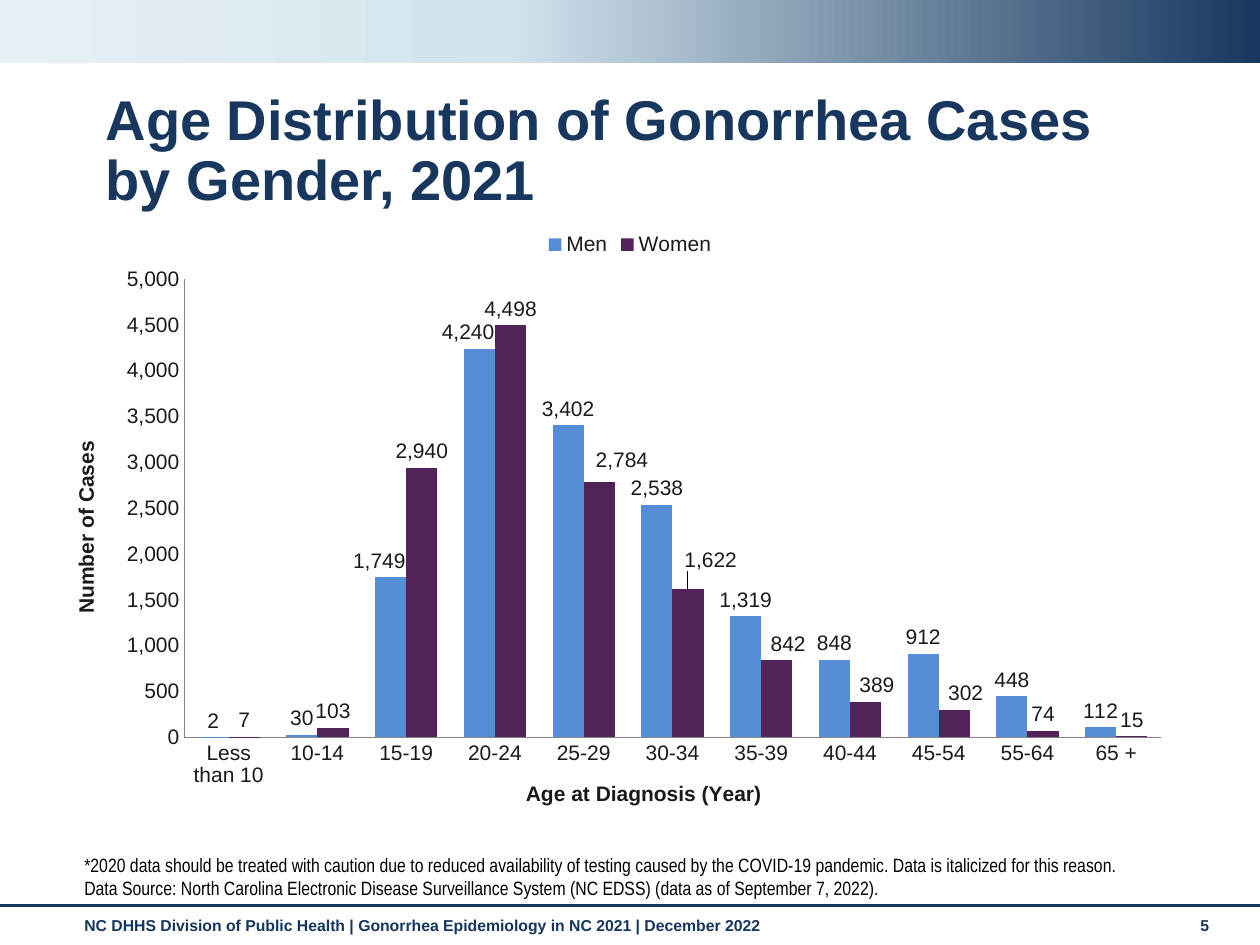
from copy import deepcopy

from lxml.etree import SubElement
from pptx import Presentation
from pptx.chart.data import CategoryChartData
from pptx.dml.color import RGBColor
from pptx.enum.chart import XL_CHART_TYPE as ChartType
from pptx.enum.chart import XL_LABEL_POSITION as LabelPosition
from pptx.enum.chart import XL_LEGEND_POSITION as LegendPosition
from pptx.enum.chart import XL_TICK_MARK as TickMark
from pptx.enum.shapes import MSO_CONNECTOR as Connector
from pptx.enum.shapes import MSO_SHAPE as Shape
from pptx.enum.text import MSO_ANCHOR as Anchor
from pptx.oxml import parse_xml
from pptx.oxml.ns import nsdecls, qn
from pptx.util import Cm, Pt

NAVY = RGBColor(0x17, 0x37, 0x5E)
FOOTER_NAVY = RGBColor(0x15, 0x36, 0x5E)
PALE_BLUE = RGBColor(0xD3, 0xE4, 0xED)
ICE = RGBColor(0xE9, 0xF1, 0xF6)
BLUE = RGBColor(0x55, 0x8E, 0xD5)
PURPLE = RGBColor(0x52, 0x23, 0x58)
INK = RGBColor(0x1A, 0x1A, 0x1A)
GRAY = RGBColor(0x86, 0x86, 0x86)
BLACK = RGBColor(0, 0, 0)

prs = Presentation()
prs.slide_width, prs.slide_height = Cm(25.4), Cm(19.05)
slide = prs.slides.add_slide(prs.slide_layouts[6])


def add_text(box, lines, size, color, bold=False, font="Arial", anchor=Anchor.TOP, spacing=None):
    frame = slide.shapes.add_textbox(*map(Cm, box)).text_frame
    frame.word_wrap = True
    frame.vertical_anchor = anchor
    frame.text = "\n".join(lines)
    for paragraph in frame.paragraphs:
        paragraph.font.name = font
        paragraph.font.size = Pt(size)
        paragraph.font.bold = bold
        paragraph.font.color.rgb = color
        paragraph.line_spacing = spacing


def manual_layout(x, y, width=None, height=None):
    layout = parse_xml(f"<c:layout {nsdecls('c')}><c:manualLayout/></c:layout>")
    values = {"x": x, "y": y}
    if width:
        values = {"layoutTarget": "inner", "xMode": "edge", "yMode": "edge",
                  **values, "w": width, "h": height}
    for tag, value in values.items():
        SubElement(layout[0], qn(f"c:{tag}")).set("val", str(value))
    return layout


banner = slide.shapes.add_shape(Shape.RECTANGLE, 0, 0, prs.slide_width, Cm(1.27))
banner.shadow.inherit = False
banner.line.fill.background()
banner.fill.gradient()
banner.fill.gradient_angle = 180
stop_list = banner.fill._fill._gradFill.gsLst
stop_list.append(deepcopy(stop_list[-1]))
for stop, position, color in zip(banner.fill.gradient_stops, (0, 0.6, 1), (NAVY, PALE_BLUE, ICE)):
    stop.position = position
    stop.color.rgb = color

footer_rule = slide.shapes.add_connector(
    Connector.STRAIGHT, 0, Cm(18.26), prs.slide_width, Cm(18.26))
footer_rule.line.color.rgb = NAVY
footer_rule.line.width = Pt(1.75)
SubElement(footer_rule._element.spPr, qn("a:effectLst"))

add_text((1.45, 18.34, 22.2, 0.74),
         ["NC DHHS Division of Public Health | Gonorrhea Epidemiology in NC 2021 | December 2022"],
         9, FOOTER_NAVY, bold=True)
add_text((23.95, 18.34, 1.12, 0.76), ["5"], 9, FOOTER_NAVY, bold=True)
add_text((1.88, 1.73, 21.79, 1.52), ["Age Distribution of Gonorrhea Cases by Gender, 2021"],
         32, NAVY, bold=True, spacing=0.9)

cases = CategoryChartData(number_format="#,##0")
cases.categories = ["Less than 10", "10-14", "15-19", "20-24", "25-29", "30-34",
                    "35-39", "40-44", "45-54", "55-64", "65 +"]
cases.add_series("Men", (2, 30, 1749, 4240, 3402, 2538, 1319, 848, 912, 448, 112))
cases.add_series("Women", (7, 103, 2940, 4498, 2784, 1622, 842, 389, 302, 74, 15))
chart = slide.shapes.add_chart(
    ChartType.COLUMN_CLUSTERED, Cm(1.27), Cm(4.42), Cm(22.86), Cm(11.94), cases).chart
chart.has_title = False
chart.font.name = "Arial"
chart.font.size = Pt(12)
chart.font.color.rgb = INK
chart.has_legend = True
chart.legend.position = LegendPosition.TOP
chart.legend.include_in_layout = False

plot_area = chart._chartSpace.chart.plotArea
for layout in plot_area.findall(qn("c:layout")):
    plot_area.remove(layout)
plot_area.insert(0, manual_layout(0.107, 0.101, 0.861, 0.774))

for axis, title in ((chart.category_axis, "Age at Diagnosis (Year)"),
                    (chart.value_axis, "Number of Cases")):
    axis.has_major_gridlines = False
    axis.major_tick_mark = axis.minor_tick_mark = TickMark.NONE
    axis.format.line.color.rgb = GRAY
    axis.format.line.width = Pt(0.75)
    axis.axis_title.text_frame.text = title
    title_font = axis.axis_title.text_frame.paragraphs[0].font
    title_font.name = "Arial"
    title_font.size = Pt(12)
    title_font.bold = True
    title_font.color.rgb = INK
chart.value_axis.minimum_scale = 0
chart.value_axis.maximum_scale = 5000
chart.value_axis.major_unit = 500
chart.value_axis.tick_labels.number_format = "#,##0"
chart.value_axis.tick_labels.number_format_is_linked = False

columns = chart.plots[0]
columns.gap_width = 85
columns.overlap = 0
columns.vary_by_categories = False
men_shifts = {2: (-0.01, 0), 3: (-0.01, 0)}
women_shifts = {4: (0.02, -0.01), 5: (0.02, -0.02), 6: (0.01, 0), 7: (0.01, 0), 8: (0.01, 0)}
for gender, color, shifts in zip(columns.series, (BLUE, PURPLE), (men_shifts, women_shifts)):
    gender.format.fill.solid()
    gender.format.fill.fore_color.rgb = color
    gender.invert_if_negative = False
    labels = gender.data_labels
    labels.show_value = True
    labels.number_format = "#,##0"
    labels.number_format_is_linked = False
    labels.position = LabelPosition.OUTSIDE_END
    for index, shift in shifts.items():
        label = gender.points[index].data_label
        label.position = LabelPosition.OUTSIDE_END
        label._dLbl.insert(1, manual_layout(*shift))

add_text((1.45, 17.35, 22.2, 0.91),
         ["*2020 data should be treated with caution due to reduced availability of testing "
          "caused by the COVID-19 pandemic. Data is italicized for this reason.",
          "Data Source: North Carolina Electronic Disease Surveillance System (NC EDSS) "
          "(data as of September 7, 2022)."],
         11, BLACK, font="Arial Narrow", anchor=Anchor.BOTTOM)

prs.save("out.pptx")
